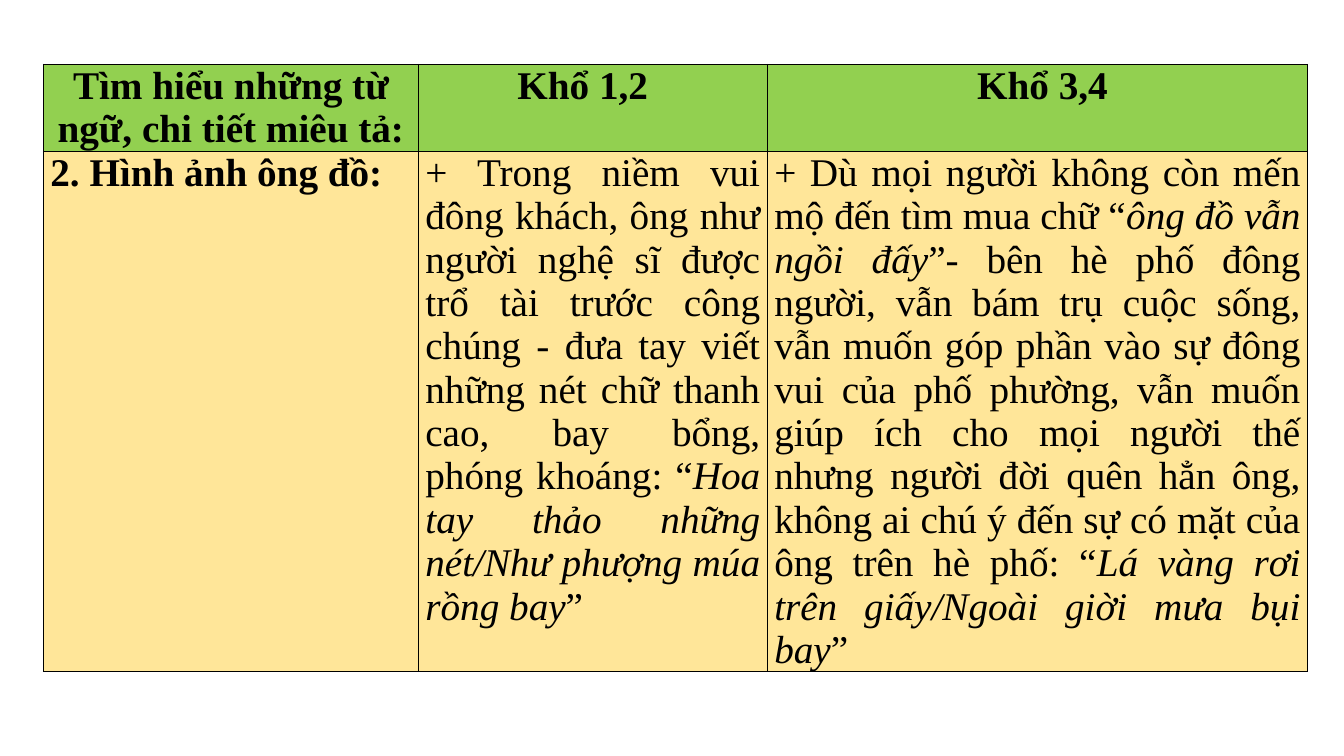
from lxml import etree
from pptx import Presentation
from pptx import util as u
from pptx.dml.color import RGBColor
from pptx.enum import text
from pptx.oxml.ns import qn

COLOURS = {"header": "92D050", "body": "FFE699", "ink": "000000"}
FONT, SIZE = "Times New Roman", 28
COLUMNS = [3.72, 3.46, 5.36]
ROWS = [0.86, 5.16]
LEFT, TOP = 0.43, 0.64
MARGIN = 0.07

# Each cell is a list of spans; every second span is a quoted verse in italics
HEADERS = [["Tìm hiểu những từ ngữ, chi tiết miêu tả:"], ["Khổ 1,2"], ["Khổ 3,4"]]
HEADER_INSETS = [(0, 0), (0, 0.2), (0.1, 0)]
DETAILS = [
    ["2. Hình ảnh ông đồ:"],
    ["+ Trong niềm vui đông khách, ông như người nghệ sĩ được trổ tài trước "
     "công chúng - đưa tay viết những nét chữ thanh cao, bay bổng, phóng khoáng: “",
     "Hoa tay thảo những nét/Như phượng múa rồng bay", "”"],
    ["+ Dù mọi người không còn mến mộ đến tìm mua chữ “",
     "ông đồ vẫn ngồi đấy",
     "”- bên hè phố đông người, vẫn bám trụ cuộc sống, vẫn muốn góp phần vào "
     "sự đông vui của phố phường, vẫn muốn giúp ích cho mọi người thế nhưng "
     "người đời quên hẳn ông, không ai chú ý đến sự có mặt của ông trên hè phố: “",
     "Lá vàng rơi trên giấy/Ngoài giời mưa bụi bay", "”"],
]


def colour(name):
    return RGBColor.from_string(COLOURS[name])


def add_borders(cell):
    properties = cell._tc.get_or_add_tcPr()
    for side in ("lnL", "lnR", "lnT", "lnB"):
        line = etree.SubElement(properties, qn(f"a:{side}"), w=str(u.Pt(1)))
        fill = etree.SubElement(line, qn("a:solidFill"))
        etree.SubElement(fill, qn("a:srgbClr"), val=COLOURS["ink"])


def fill_cell(cell, spans, fill, align, bold, insets=(0, 0)):
    add_borders(cell)
    cell.fill.solid()
    cell.fill.fore_color.rgb = colour(fill)
    cell.margin_left = u.Inches(MARGIN + insets[0])
    cell.margin_right = u.Inches(MARGIN + insets[1])
    cell.margin_top = cell.margin_bottom = 0

    para = cell.text_frame.paragraphs[0]
    para.alignment = align
    para.font.name, para.font.size = FONT, u.Pt(SIZE)
    para.font.bold = bold
    para.font.color.rgb = colour("ink")
    for index, words in enumerate(spans):
        span = para.add_run()
        span.text = words
        if index % 2:
            span.font.italic = True


def add_grid(page):
    frame = page.shapes.add_table(
        len(ROWS), len(COLUMNS), u.Inches(LEFT), u.Inches(TOP),
        u.Inches(sum(COLUMNS)), u.Inches(sum(ROWS)))
    table = frame.table
    table.first_row = table.horz_banding = False
    for column, width in zip(table.columns, COLUMNS):
        column.width = u.Inches(width)
    for row, height in zip(table.rows, ROWS):
        row.height = u.Inches(height)
    return table


def main():
    deck = Presentation()
    deck.slide_width, deck.slide_height = u.Inches(13.33), u.Inches(7.5)
    page = deck.slides.add_slide(deck.slide_layouts[6])
    table = add_grid(page)

    # Header row
    for index, (spans, insets) in enumerate(zip(HEADERS, HEADER_INSETS)):
        fill_cell(table.cell(0, index), spans, "header",
                  text.PP_ALIGN.CENTER, True, insets)

    # Detail row, led by a bold topic
    for index, spans in enumerate(DETAILS):
        fill_cell(table.cell(1, index), spans, "body",
                  text.PP_ALIGN.JUSTIFY, index == 0)

    deck.save("out.pptx")


if __name__ == "__main__":
    main()
